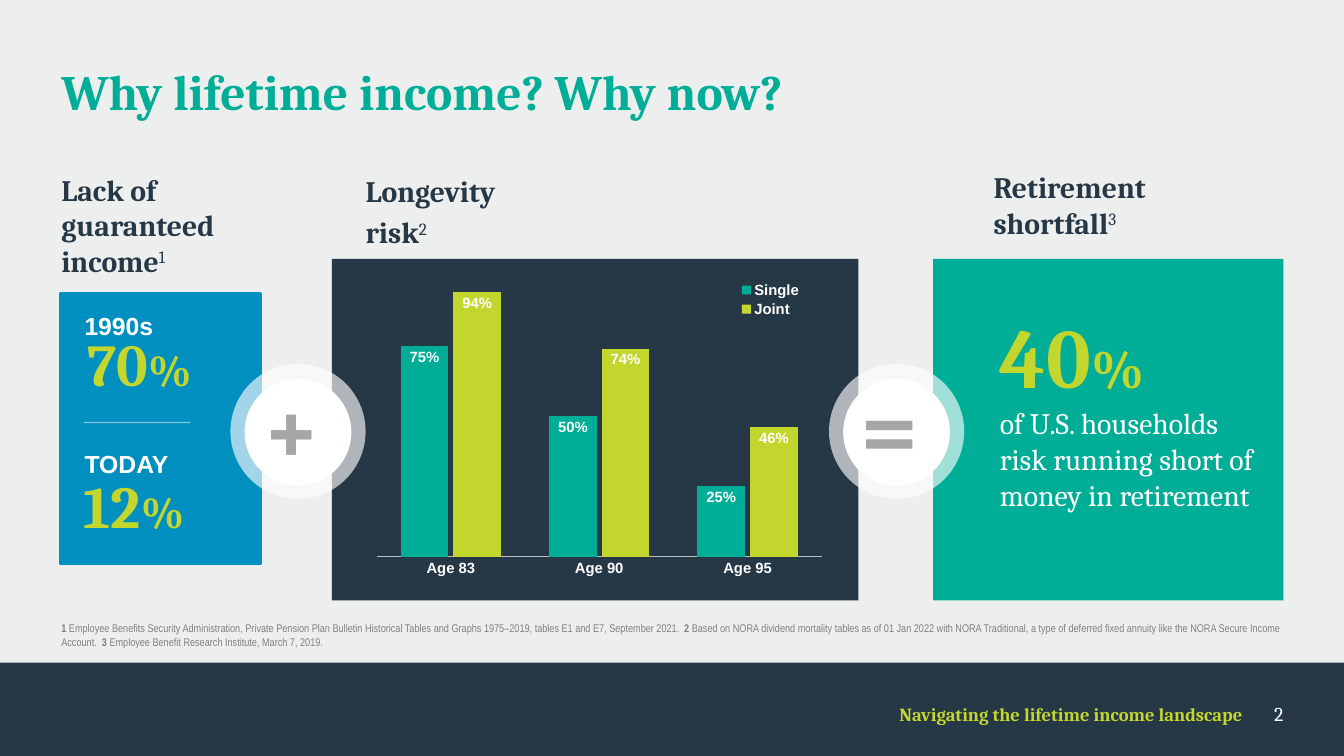
"""Build the lifetime income slide with its panels, chart and badges."""
from dataclasses import dataclass

from lxml.etree import SubElement
from pptx import Presentation
from pptx.chart.data import CategoryChartData
from pptx.dml.color import RGBColor
from pptx.dml.fill import FillFormat
from pptx.enum.chart import XL_CHART_TYPE, XL_LABEL_POSITION, XL_LEGEND_POSITION, XL_TICK_MARK
from pptx.enum.shapes import MSO_CONNECTOR, MSO_SHAPE
from pptx.enum.text import MSO_ANCHOR, PP_ALIGN
from pptx.oxml import parse_xml
from pptx.oxml.ns import nsdecls, qn
from pptx.slide import Slide
from pptx.text.text import Font, TextFrame
from pptx.util import Pt

SCALE = 9144
NAVY, TEAL, LIME, BLUE = "263746", "00AD97", "C3D62E", "008FBE"
WHITE, PALE, GREY, SILVER, RULE = "FFFFFF", "EDEEEE", "808080", "A6A6A6", "BFBFBF"


@dataclass(frozen=True)
class Span:
    """A run of text with one format."""
    text: str
    size: float
    color: str
    bold: bool = True
    font: str = "Cambria"
    raised: bool = False
    breaks: bool = False


@dataclass(frozen=True)
class Label:
    """A text box and its paragraphs of spans."""
    left: int
    top: int
    width: int
    height: int
    paras: tuple[tuple[Span, ...], ...]
    anchor: MSO_ANCHOR = MSO_ANCHOR.TOP
    align: PP_ALIGN = PP_ALIGN.LEFT
    after: int = 0
    inset: tuple[int, int] = (0, 0)


@dataclass(frozen=True)
class Block:
    """A filled preset shape."""
    left: int
    top: int
    width: int
    height: int
    color: str
    kind: MSO_SHAPE = MSO_SHAPE.RECTANGLE
    outline: float = 0
    opacity: int = 100


@dataclass(frozen=True)
class Badge:
    """A ringed circle holding an operator."""
    left: int
    symbol: str
    symbol_width: int


def px(value: int) -> int:
    """Turn px into EMU."""
    return value * SCALE


def rgb(color: str) -> RGBColor:
    """Turn a hex string into a colour."""
    return RGBColor.from_string(color)


def set_opacity(fill: FillFormat, percent: int) -> None:
    """Make a solid fill partly transparent."""
    color = fill._xPr.find(qn("a:solidFill"))[0]
    SubElement(color, qn("a:alpha")).set("val", str(percent * 1000))


def style_font(font: Font, size: float, color: str, bold: bool, name: str) -> None:
    """Apply size, colour, weight and typeface."""
    font.size, font.bold, font.name = Pt(size), bold, name
    font.color.rgb = rgb(color)


def fill_text(frame: TextFrame, label: Label) -> None:
    """Write the paragraphs of a label into a text frame."""
    frame.word_wrap = True
    frame.vertical_anchor = label.anchor
    frame.margin_left = frame.margin_right = px(label.inset[0])
    frame.margin_top = frame.margin_bottom = px(label.inset[1])
    for index, spans in enumerate(label.paras):
        para = frame.add_paragraph() if index else frame.paragraphs[0]
        para.alignment = label.align
        para.space_after = Pt(label.after)
        for span in spans:
            run = para.add_run()
            run.text = span.text
            style_font(run.font, span.size, span.color, span.bold, span.font)
            if span.raised:
                run._r.get_or_add_rPr().set("baseline", "30000")
            if span.breaks:
                para.add_line_break()


def add_label(page: Slide, label: Label) -> None:
    """Draw a text box."""
    box = page.shapes.add_textbox(px(label.left), px(label.top), px(label.width), px(label.height))
    fill_text(box.text_frame, label)


def add_block(page: Slide, block: Block) -> None:
    """Draw a filled shape."""
    shape = page.shapes.add_shape(
        block.kind, px(block.left), px(block.top), px(block.width), px(block.height))
    shape.shadow.inherit = False
    shape.fill.solid()
    shape.fill.fore_color.rgb = rgb(block.color)
    if block.opacity < 100:
        set_opacity(shape.fill, block.opacity)
    if block.outline:
        shape.line.color.rgb = rgb(block.color)
        shape.line.width = Pt(block.outline)
    else:
        shape.line.fill.background()


def add_badge(page: Slide, badge: Badge) -> None:
    """Draw a ring, a disc and an operator."""
    add_block(page, Block(badge.left, 409, 152, 152, WHITE, MSO_SHAPE.OVAL, opacity=63))
    add_block(page, Block(badge.left + 16, 426, 120, 120, WHITE, MSO_SHAPE.OVAL))
    add_label(page, Label(badge.left + 26, 405, badge.symbol_width, 145,
                          ((Span(badge.symbol, 80, SILVER),),), inset=(10, 5)))


def add_divider(page: Slide) -> None:
    """Draw the faint rule between the two income figures."""
    line = page.shapes.add_connector(MSO_CONNECTOR.STRAIGHT, px(94), px(475), px(214), px(475))
    line.line.color.rgb = rgb(WHITE)
    line.line.width = Pt(1)
    set_opacity(line.line.fill, 50)
    SubElement(line._element.spPr, qn("a:effectLst"))


def manual_layout(x: float, y: float, width: float, height: float, inner: bool = False):
    """Return a chart layout element in fractions of the chart."""
    target = '<c:layoutTarget val="inner"/>' if inner else ""
    return parse_xml(
        f'<c:layout {nsdecls("c")}><c:manualLayout>{target}'
        '<c:xMode val="edge"/><c:yMode val="edge"/>'
        f'<c:x val="{x}"/><c:y val="{y}"/><c:w val="{width}"/><c:h val="{height}"/>'
        '</c:manualLayout></c:layout>')


def add_longevity_chart(page: Slide) -> None:
    """Draw the survival odds as clustered columns."""
    data = CategoryChartData(number_format="0%")
    data.categories = ["Age 83", "Age 90", "Age 95"]
    data.add_series("Single", (0.75, 0.5, 0.25))
    data.add_series("Joint", (0.94, 0.74, 0.46))
    chart = page.shapes.add_chart(
        XL_CHART_TYPE.COLUMN_CLUSTERED, px(396), px(290), px(550), px(391), data).chart
    chart.has_title = False
    style_font(chart.font, 12, WHITE, True, "Arial")
    values, ages = chart.value_axis, chart.category_axis
    values.minimum_scale, values.maximum_scale, values.major_unit = 0, 1, 0.25
    values.has_major_gridlines = values.visible = False
    ages.major_tick_mark = XL_TICK_MARK.NONE
    ages.format.line.color.rgb = rgb(RULE)
    ages.format.line.width = Pt(0.75)
    plot = chart.plots[0]
    plot.gap_width, plot.overlap, plot.vary_by_categories = 100, -10, False
    for series, color in zip(plot.series, (TEAL, LIME)):
        series.format.fill.solid()
        series.format.fill.fore_color.rgb = rgb(color)
        labels = series.data_labels
        labels.show_value = True
        labels.position = XL_LABEL_POSITION.INSIDE_END
        labels.number_format, labels.number_format_is_linked = "0%", False
        style_font(labels.font, 12, WHITE, True, "Arial")
    chart.has_legend = True
    legend = chart.legend
    legend.position, legend.include_in_layout = XL_LEGEND_POSITION.TOP, False
    style_font(legend.font, 12, WHITE, True, "Arial")
    legend._element.find(qn("c:legendPos")).addnext(manual_layout(0.78, 0.06, 0.15, 0.12))
    area = chart._chartSpace.chart.plotArea
    for layout in area.findall(qn("c:layout")):
        area.remove(layout)
    area.insert(0, manual_layout(0.05, 0.05, 0.91, 0.81, inner=True))


def heading(*lines: str, note: str) -> tuple[tuple[Span, ...], ...]:
    """Return bold lines ending in a raised note number."""
    paras = [(Span(line, 24, NAVY),) for line in lines]
    paras[-1] += (Span(note, 24, NAVY, False, raised=True),)
    return tuple(paras)


def figure(number: str) -> tuple[tuple[Span, ...], ...]:
    """Return a large percentage."""
    return ((Span(number, 48, LIME), Span("%", 36, LIME)),)


def period(name: str) -> tuple[tuple[Span, ...], ...]:
    """Return the caption over a percentage."""
    return ((Span(name, 20, WHITE, font="Arial"),),)


FOOTNOTES = (
    ("1", " Employee Benefits Security Administration, Private Pension Plan Bulletin Historical Tables "
          "and Graphs 1975–2019, tables E1 and E7, September 2021.  "),
    ("2", " Based on NORA dividend mortality tables as of 01 Jan 2022 with NORA Traditional, a type of "
          "deferred fixed annuity like the NORA Secure Income Account.  "),
    ("3", " Employee Benefit Research Institute, March 7, 2019."),
)
NOTES = tuple(Span(text, 9, GREY, bold, "Arial Narrow")
              for note in FOOTNOTES for text, bold in zip(note, (True, False)))
SHORTFALL = (Span("40", 68, LIME), Span("%", 44, LIME, breaks=True),
             Span("of U.S. households risk running short of money in retirement", 24, WHITE, False))
TITLE = Label(69, 69, 1374, 113, ((Span("Why lifetime income? Why now?", 40, TEAL),),))
BLOCKS = (
    Block(0, 745, 1511, 105, NAVY),
    Block(68, 330, 225, 304, BLUE, outline=2),
    Block(373, 291, 592, 384, NAVY),
    Block(1049, 291, 394, 384, TEAL),
)
LABELS = (
    Label(69, 193, 343, 76, heading("Lack of", "guaranteed", "income", note="1")),
    Label(411, 194, 577, 62, heading("Longevity", "risk", note="2"), after=5),
    Label(1117, 190, 325, 100, heading("Retirement", "shortfall", note="3")),
    Label(95, 349, 98, 44, period("1990s")),
    Label(98, 366, 250, 84, figure("70"), MSO_ANCHOR.MIDDLE, after=5),
    Label(95, 505, 105, 44, period("TODAY")),
    Label(94, 521, 181, 94, figure("12"), MSO_ANCHOR.MIDDLE, after=5),
    Label(1124, 321, 294, 276, (SHORTFALL,), MSO_ANCHOR.MIDDLE),
    Label(69, 688, 1374, 41, (NOTES,), MSO_ANCHOR.BOTTOM),
    Label(779, 790, 618, 42, ((Span("Navigating the lifetime income landscape", 15, LIME),),),
          align=PP_ALIGN.RIGHT),
    Label(1403, 789, 40, 33, ((Span("2", 16, WHITE, False),),), align=PP_ALIGN.RIGHT),
)
BADGES = (Badge(932, "=", 70), Badge(259, "+", 56))


def main() -> None:
    """Build and save the deck."""
    deck = Presentation()
    deck.slide_width, deck.slide_height = px(1511), px(850)
    page = deck.slides.add_slide(deck.slide_layouts[5])
    page.background.fill.solid()
    page.background.fill.fore_color.rgb = rgb(PALE)
    title = page.shapes.title
    title.left, title.top, title.width, title.height = map(
        px, (TITLE.left, TITLE.top, TITLE.width, TITLE.height))
    fill_text(title.text_frame, TITLE)
    for block in BLOCKS:
        add_block(page, block)
    add_longevity_chart(page)
    for label in LABELS:
        add_label(page, label)
    for badge in BADGES:
        add_badge(page, badge)
    add_divider(page)
    deck.save("out.pptx")


if __name__ == "__main__":
    main()
